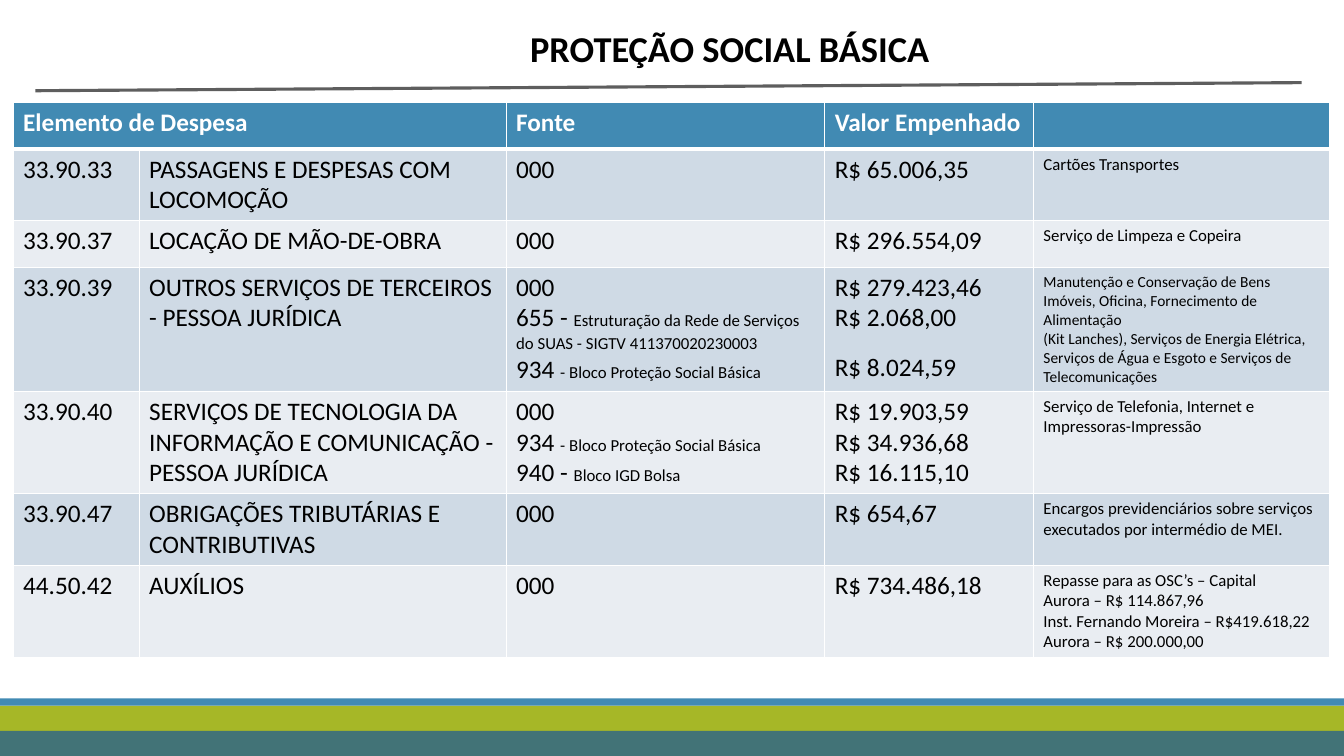
"""Build the slide on committed spending for basic social protection."""
from dataclasses import dataclass

from lxml import etree
from pptx import Presentation
from pptx import util as u
from pptx.dml.color import RGBColor
from pptx.enum import shapes, text
from pptx.oxml.ns import qn

TITLE = "PROTEÇÃO SOCIAL BÁSICA"
HEADINGS = ("Elemento de Despesa", "", "Fonte", "Valor Empenhado", "")
EXPENSES = (
    (["33.90.33"], ["PASSAGENS E DESPESAS COM LOCOMOÇÃO"], ["000"],
     ["R$ 65.006,35"], ["Cartões Transportes"]),
    (["33.90.37"], ["LOCAÇÃO DE MÃO-DE-OBRA"], ["000"],
     ["R$ 296.554,09"], ["Serviço de Limpeza e Copeira"]),
    (["33.90.39"], ["OUTROS SERVIÇOS DE TERCEIROS - PESSOA JURÍDICA"],
     ["000",
      ("655 - ", "Estruturação da Rede de Serviços do SUAS - SIGTV 411370020230003"),
      ("934 ", "- Bloco Proteção Social Básica")],
     ["R$ 279.423,46", "R$ 2.068,00", "R$ 8.024,59"],
     ["Manutenção e Conservação de Bens Imóveis, Oficina, Fornecimento de Alimentação",
      "(Kit Lanches), Serviços de Energia Elétrica, Serviços de Água e Esgoto "
      "e Serviços de Telecomunicações"]),
    (["33.90.40"],
     ["SERVIÇOS DE TECNOLOGIA DA INFORMAÇÃO E COMUNICAÇÃO - PESSOA JURÍDICA"],
     ["000", ("934 ", "- Bloco Proteção Social Básica"), ("940 - ", "Bloco IGD Bolsa")],
     ["R$ 19.903,59", "R$ 34.936,68", "R$ 16.115,10"],
     ["Serviço de Telefonia, Internet e Impressoras-Impressão"]),
    (["33.90.47"], ["OBRIGAÇÕES TRIBUTÁRIAS E CONTRIBUTIVAS"], ["000"],
     ["R$ 654,67"],
     ["Encargos previdenciários sobre serviços executados por intermédio de MEI."]),
    (["44.50.42"], ["AUXÍLIOS"], ["000"], ["R$ 734.486,18"],
     ["Repasse para as OSC’s – Capital", "Aurora – R$ 114.867,96",
      "Inst. Fernando Moreira – R$419.618,22", "Aurora – R$ 200.000,00"]),
)
COLUMNS = (1.25, 3.64, 3.16, 2.07, 2.94)
ROWS = (0.46, 0.7, 0.46, 1.21, 1.0, 0.7, 0.9)
LONG_ROW = 3
VALUE_COLUMN, NOTE_COLUMN = 3, 4


@dataclass(frozen=True)
class Theme:
    font: str = "Calibri"
    title: float = 26
    body: float = 18
    small: float = 12
    tiny: float = 11
    black: str = "000000"
    white: str = "FFFFFF"
    blue: str = "418AB3"
    green: str = "A6B727"
    teal: str = "316886"
    rule: str = "5E5E5E"
    bands: tuple = ("CFDAE5", "E9EDF2")


THEME = Theme()
BANDS = ((7.0, 0.5, THEME.green, 100), (6.93, 0.07, THEME.blue, 100),
         (7.25, 0.25, THEME.teal, 85))


def write(frame, lines, size=THEME.body, color=THEME.black, bold=False,
          align=text.PP_ALIGN.LEFT, gap_before_last=0):
    """Write lines; in a tuple the second part is set small."""
    frame.word_wrap = True
    for index, line in enumerate(lines):
        paragraph = frame.paragraphs[0] if index == 0 else frame.add_paragraph()
        paragraph.alignment = align
        parts = (line,) if isinstance(line, str) else line
        for part, part_size in zip(parts, (size, THEME.small)):
            run = paragraph.add_run()
            run.text = part
            run.font.name, run.font.size, run.font.bold = THEME.font, u.Pt(part_size), bold
            run.font.color.rgb = RGBColor.from_string(color)
    if gap_before_last:
        paragraph.space_before = u.Pt(gap_before_last)


def paint(cell, color, top=1, bottom=1):
    """Fill a cell and give it white borders."""
    cell.fill.solid()
    cell.fill.fore_color.rgb = RGBColor.from_string(color)
    properties = cell._tc.get_or_add_tcPr()
    widths = {"a:lnL": 1, "a:lnR": 1, "a:lnT": top, "a:lnB": bottom}
    for index, (side, width) in enumerate(widths.items()):
        border = etree.Element(qn(side), w=str(u.Pt(width)))
        solid = etree.SubElement(border, qn("a:solidFill"))
        etree.SubElement(solid, qn("a:srgbClr"), val=THEME.white)
        properties.insert(index, border)


def add_band(slide, width, top, height, color, opacity):
    """Add a full-width band at the foot."""
    band = slide.shapes.add_shape(shapes.MSO_SHAPE.RECTANGLE, 0, u.Inches(top),
                                  width, u.Inches(height))
    band.shadow.inherit = False
    band.line.fill.background()
    band.fill.solid()
    band.fill.fore_color.rgb = RGBColor.from_string(color)
    if opacity < 100:
        tone = band._element.spPr.find(".//" + qn("a:srgbClr"))
        etree.SubElement(tone, qn("a:alpha"), val=str(opacity * 1000))


def add_title(slide):
    """Place the title and the slanted rule under it."""
    title = slide.shapes.title
    title.left, title.top, title.width, title.height = map(u.Inches, (5, 0.21, 4.48, 0.54))
    title.text_frame.auto_size = text.MSO_AUTO_SIZE.NONE
    title.text_frame.vertical_anchor = text.MSO_ANCHOR.TOP
    write(title.text_frame, [TITLE], size=THEME.title, bold=True,
          align=text.PP_ALIGN.CENTER)
    rule = slide.shapes.add_connector(shapes.MSO_CONNECTOR.STRAIGHT,
                                      *map(u.Inches, (0.35, 0.9, 12.91, 0.82)))
    rule.line.width = u.Pt(2.25)
    rule.line.color.rgb = RGBColor.from_string(THEME.rule)
    etree.SubElement(rule._element.spPr, qn("a:effectLst"))


def add_expenses(slide):
    """Add the expense table."""
    frame = slide.shapes.add_table(len(ROWS), len(COLUMNS), *map(
        u.Inches, (0.13, 1.02, sum(COLUMNS), sum(ROWS))))
    table = frame.table
    table.horz_banding = False
    for column, width in zip(table.columns, COLUMNS):
        column.width = u.Inches(width)
    for row, height in zip(table.rows, ROWS):
        row.height = u.Inches(height)
    for column, heading in enumerate(HEADINGS):
        cell = table.cell(0, column)
        paint(cell, THEME.blue, bottom=3)
        if heading:
            write(cell.text_frame, [heading], color=THEME.white, bold=True)
    table.cell(0, 0).merge(table.cell(0, 1))
    for row, expense in enumerate(EXPENSES, start=1):
        for column, lines in enumerate(expense):
            cell = table.cell(row, column)
            paint(cell, THEME.bands[(row - 1) % 2], top=3 if row == 1 else 1)
            note_size = THEME.tiny if row == LONG_ROW else THEME.small
            size = note_size if column == NOTE_COLUMN else THEME.body
            gap = 13.5 if (row, column) == (LONG_ROW, VALUE_COLUMN) else 0
            write(cell.text_frame, lines, size=size, gap_before_last=gap)


def main():
    presentation = Presentation()
    presentation.slide_width, presentation.slide_height = u.Inches(13.33), u.Inches(7.5)
    slide = presentation.slides.add_slide(presentation.slide_layouts.get_by_name("Title Only"))
    for band in BANDS:
        add_band(slide, presentation.slide_width, *band)
    add_title(slide)
    add_expenses(slide)
    presentation.save("out.pptx")


if __name__ == "__main__":
    main()
